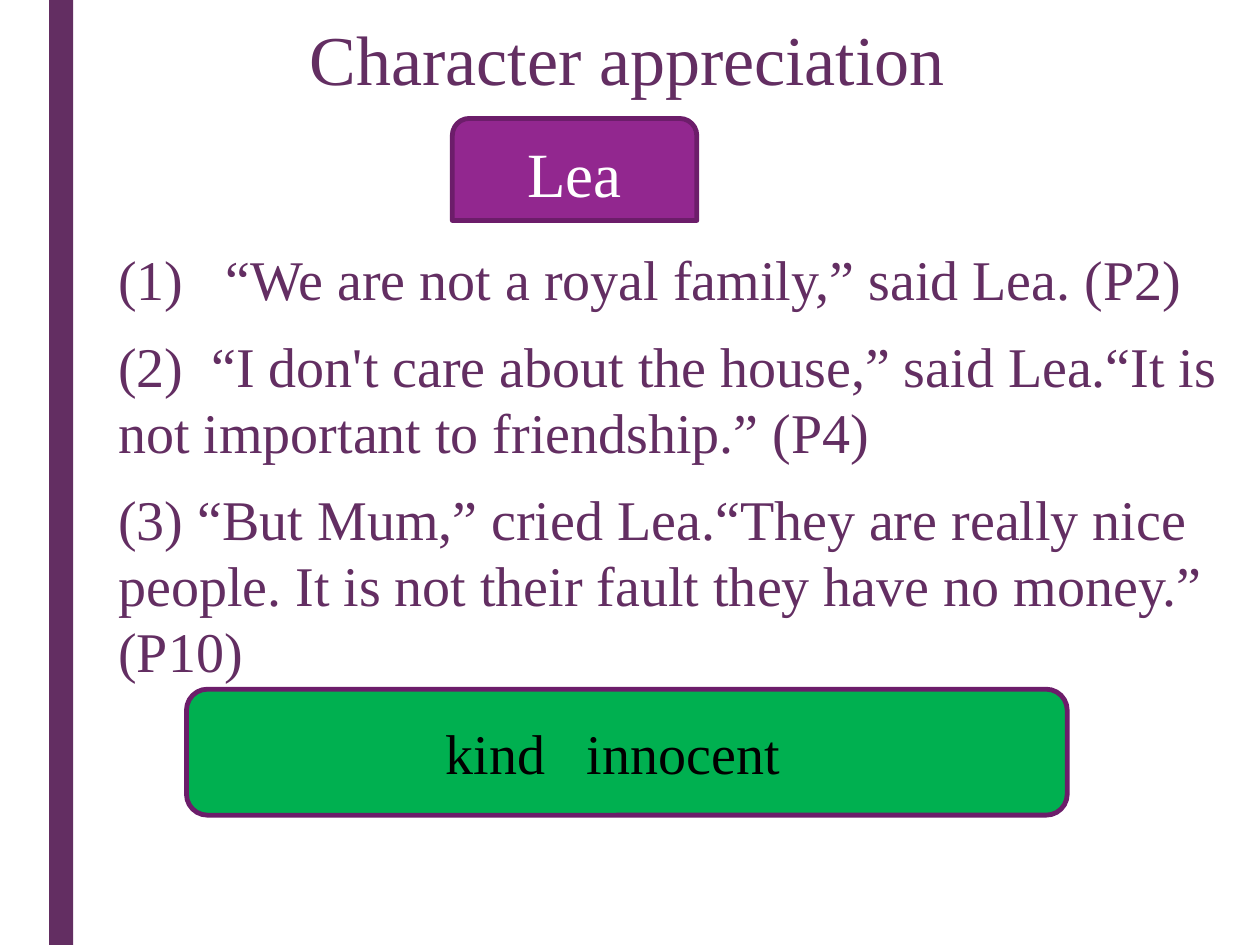
import pptx
import pptx.util
import pptx.dml.color
import pptx.enum.shapes
import pptx.enum.text
import lxml.etree
from pptx.oxml.ns import qn

COLUMNS, ROWS = 100, 75
FONT = "Times New Roman"
COLORS = {
    "plum": "632E62",
    "violet": "92278F",
    "outline": "6C1D6A",
    "green": "00B050",
    "white": "FFFFFF",
    "black": "000000",
}
QUOTES = [
    ("(1)\t“We are not a royal family,” said Lea. (P2)", 8.5),
    ("(2)\t“I don't care about the house,” said Lea.“It is not important to friendship.” (P4)", 7.4),
    ("(3) “But Mum,” cried Lea.“They are really nice people. It is not their fault they have no money.” (P10)", None),
]

deck = pptx.Presentation()
deck.slide_width = pptx.util.Inches(10)
deck.slide_height = pptx.util.Inches(7.5)


def across(columns):
    return round(deck.slide_width * columns / COLUMNS)


def down(rows):
    return round(deck.slide_height * rows / ROWS)


def place(box):
    left, top, width, height = box
    return across(left), down(top), across(width), down(height)


def color(name):
    return pptx.dml.color.RGBColor.from_string(COLORS[name])


def write(para, text, size, ink, tab=None):
    para.text = text
    para.font.name = FONT
    para.font.size = pptx.util.Pt(size)
    para.font.color.rgb = color(ink)
    if tab is not None:
        stops = lxml.etree.SubElement(para._p.get_or_add_pPr(), qn("a:tabLst"))
        lxml.etree.SubElement(stops, qn("a:tab"), pos=str(across(tab)), algn="l")


def add_panel(page, box, kind, fill, line=None):
    panel = page.shapes.add_shape(kind, *place(box))
    panel.shadow.inherit = False
    panel.fill.solid()
    panel.fill.fore_color.rgb = color(fill)
    if line:
        panel.line.color.rgb = color(line)
        panel.line.width = pptx.util.Pt(2.75)
    else:
        panel.line.fill.background()
    panel.text_frame.vertical_anchor = pptx.enum.text.MSO_ANCHOR.MIDDLE
    return panel


def add_text(page, box):
    frame = page.shapes.add_textbox(*place(box)).text_frame
    frame.word_wrap = True
    return frame


def add_title(page, box):
    frame = add_text(page, box)
    frame.margin_left = across(10.7)
    para = frame.paragraphs[0]
    para.line_spacing = 0.97
    write(para, "Character appreciation", 40, "plum")


def add_quotes(page, box):
    frame = add_text(page, box)
    frame.margin_top = down(8)
    for index, (quote, tab) in enumerate(QUOTES):
        para = frame.add_paragraph() if index else frame.paragraphs[0]
        para.line_spacing = 0.98
        para.space_after = pptx.util.Pt(12)
        write(para, quote, 32, "plum", tab)


def add_name(page, box):
    kind = pptx.enum.shapes.MSO_SHAPE.ROUND_2_SAME_RECTANGLE
    para = add_panel(page, box, kind, "violet", "outline").text_frame.paragraphs[0]
    para.alignment = pptx.enum.text.PP_ALIGN.CENTER
    write(para, "Lea", 36, "white")


def add_traits(page, box):
    kind = pptx.enum.shapes.MSO_SHAPE.ROUNDED_RECTANGLE
    frame = add_panel(page, box, kind, "green", "outline").text_frame
    frame.margin_left = across(20.1)
    para = frame.paragraphs[0]
    para.alignment = pptx.enum.text.PP_ALIGN.LEFT
    write(para, "kind\tinnocent", 32, "black", 11.2)


def main():
    page = deck.slides.add_slide(deck.slide_layouts[6])
    add_panel(page, (3.9, 0, 1.9, ROWS), pptx.enum.shapes.MSO_SHAPE.RECTANGLE, "plum")
    add_title(page, (13.9, 1.1, 78.8, 16.2))
    add_quotes(page, (8.4, 11.7, 89.9, 40.9))
    add_name(page, (35.9, 9.4, 19.4, 8.1))
    add_traits(page, (14.8, 54.7, 69.9, 10))
    deck.save("out.pptx")


if __name__ == "__main__":
    main()
